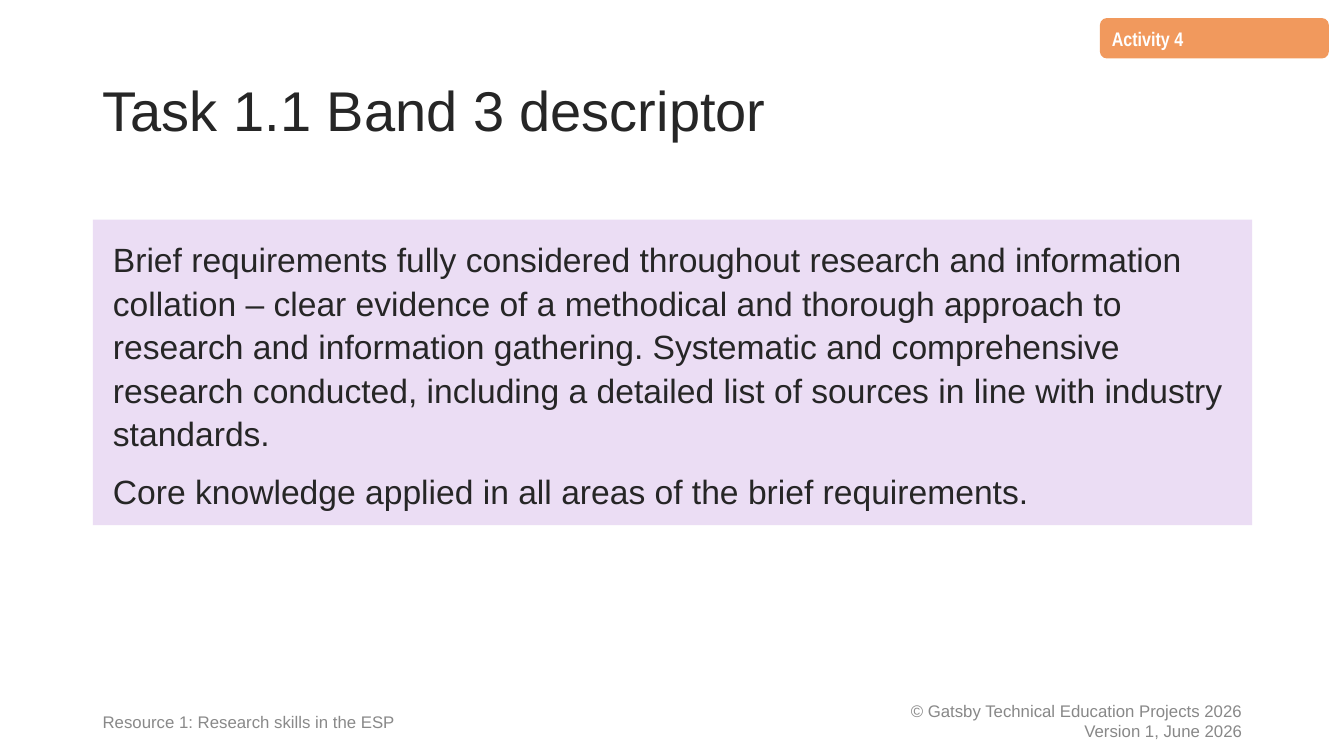
from pptx import Presentation
from pptx.dml.color import RGBColor
from pptx.enum import shapes, text
from pptx.oxml import xmlchemy
from pptx.util import Inches, Pt

COLORS = {
    "ink": "262626",
    "copyright": "888888",
    "resource": "898989",
    "badge": "F1995D",
    "panel": "EBDDF4",
    "white": "FFFFFF",
}
LEFT, WIDTH = 0.92, 11.5
FOOTER_TOP, FOOTER_HEIGHT = 6.95, 0.4


def rgb(name):
    return RGBColor.from_string(COLORS[name])


def place(sp, box):
    sp.left, sp.top, sp.width, sp.height = map(Inches, box)


def write(sp, lines, size, color, font="Arial", bold=False, align=text.PP_ALIGN.LEFT,
          anchor=text.MSO_ANCHOR.TOP, spacing=None, gap=0, inset=(0.1, 0.05)):
    tf = sp.text_frame
    tf.word_wrap = True
    tf.auto_size = text.MSO_AUTO_SIZE.NONE
    tf.vertical_anchor = anchor
    tf.margin_left = tf.margin_right = Inches(inset[0])
    tf.margin_top = tf.margin_bottom = Inches(inset[1])
    for i, line in enumerate(lines):
        p = tf.paragraphs[0] if i == 0 else tf.add_paragraph()
        p.text = line
        p.alignment = align
        p.line_spacing = spacing
        p.space_before = Pt(gap if i else 0)
        p.font.size = Pt(size)
        p.font.name = font
        p.font.bold = bold
        p.font.color.rgb = rgb(color)


def add_footer(s, box, lines, color, align, spacing=None):
    sp = s.shapes.add_textbox(*map(Inches, box))
    write(sp, lines, 12, color, align=align, anchor=text.MSO_ANCHOR.MIDDLE, spacing=spacing)


def add_badge(s, box, label):
    sp = s.shapes.add_shape(shapes.MSO_SHAPE.FLOWCHART_ALTERNATE_PROCESS, *map(Inches, box))
    sp.shadow.inherit = False
    sp.fill.solid()
    sp.fill.fore_color.rgb = rgb("badge")
    sp.line.fill.background()
    write(sp, [label], 14, "white", font="Arial Narrow", bold=True, spacing=1.08)


def fill_title(s, box, title):
    sp = s.shapes.title
    place(sp, box)
    write(sp, [title], 40, "ink", anchor=text.MSO_ANCHOR.MIDDLE, spacing=0.9)


def fill_descriptor(s, box, lines):
    sp = s.placeholders[1]
    place(sp, box)
    sp.fill.solid()
    sp.fill.fore_color.rgb = rgb("panel")
    write(sp, lines, 24, "ink", spacing=1.08, gap=10, inset=(0.2, 0.16))
    for p in sp.text_frame.paragraphs:
        pPr = p._p.get_or_add_pPr()
        pPr.set("marL", "0")
        pPr.set("indent", "0")
        bullet = xmlchemy.OxmlElement("a:buNone")
        pPr.insert_element_before(bullet, "a:tabLst", "a:defRPr", "a:extLst")


def main():
    prs = Presentation()
    prs.slide_width, prs.slide_height = Inches(13.33), Inches(7.5)
    s = prs.slides.add_slide(prs.slide_layouts[1])
    add_footer(s, (LEFT + WIDTH - 4.5, FOOTER_TOP, 4.5, FOOTER_HEIGHT),
               ["© Gatsby Technical Education Projects 2026", "Version 1, June 2026"],
               "copyright", text.PP_ALIGN.RIGHT)
    add_badge(s, (10.91, 0.18, 2.27, 0.4), "Activity 4")
    fill_title(s, (LEFT, 0.4, WIDTH, 1.45), "Task 1.1 Band 3 descriptor")
    add_footer(s, (LEFT, FOOTER_TOP, 4.6, FOOTER_HEIGHT),
               ["Resource 1: Research skills in the ESP"],
               "resource", text.PP_ALIGN.LEFT, 1.08)
    fill_descriptor(s, (LEFT, 2.18, WIDTH, 3.03), [
        "Brief requirements fully considered throughout research and information collation – "
        "clear evidence of a methodical and thorough approach to research and information "
        "gathering. Systematic and comprehensive research conducted, including a detailed "
        "list of sources in line with industry standards.",
        "Core knowledge applied in all areas of the brief requirements.",
    ])
    prs.save("out.pptx")


if __name__ == "__main__":
    main()
